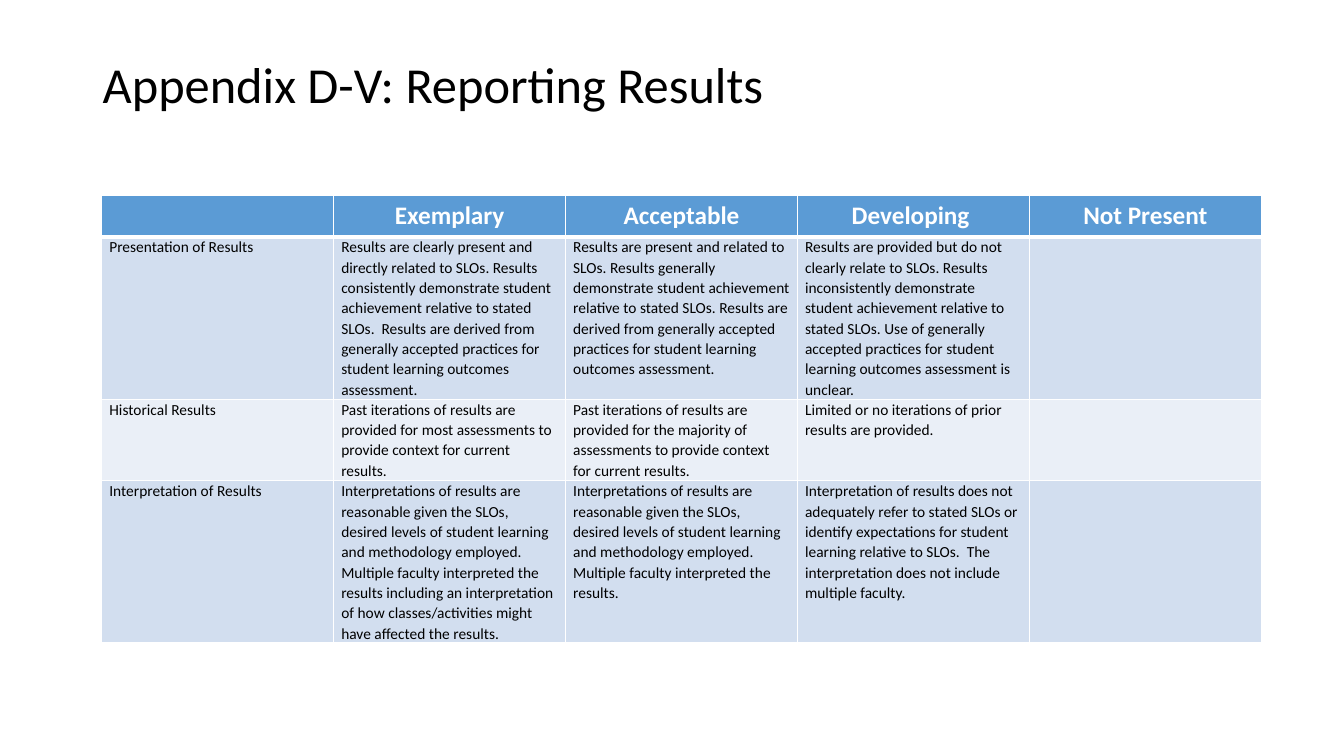
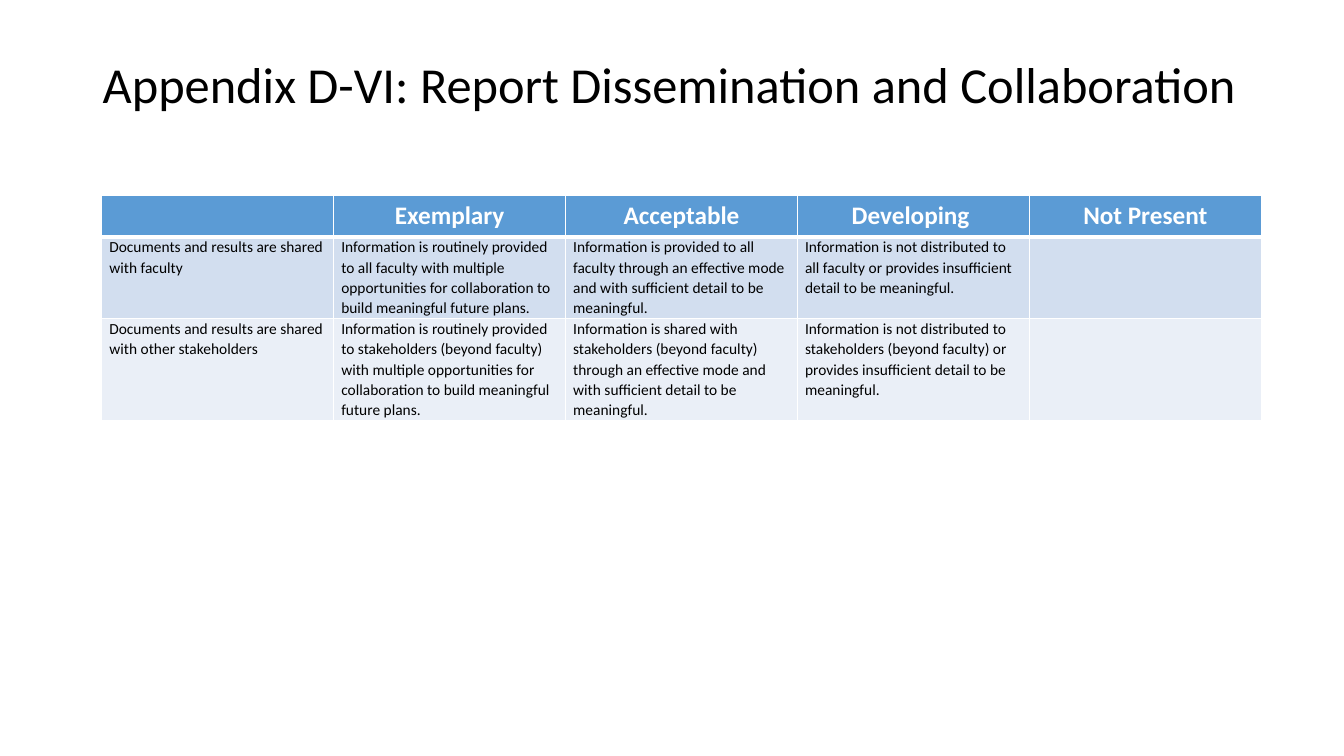
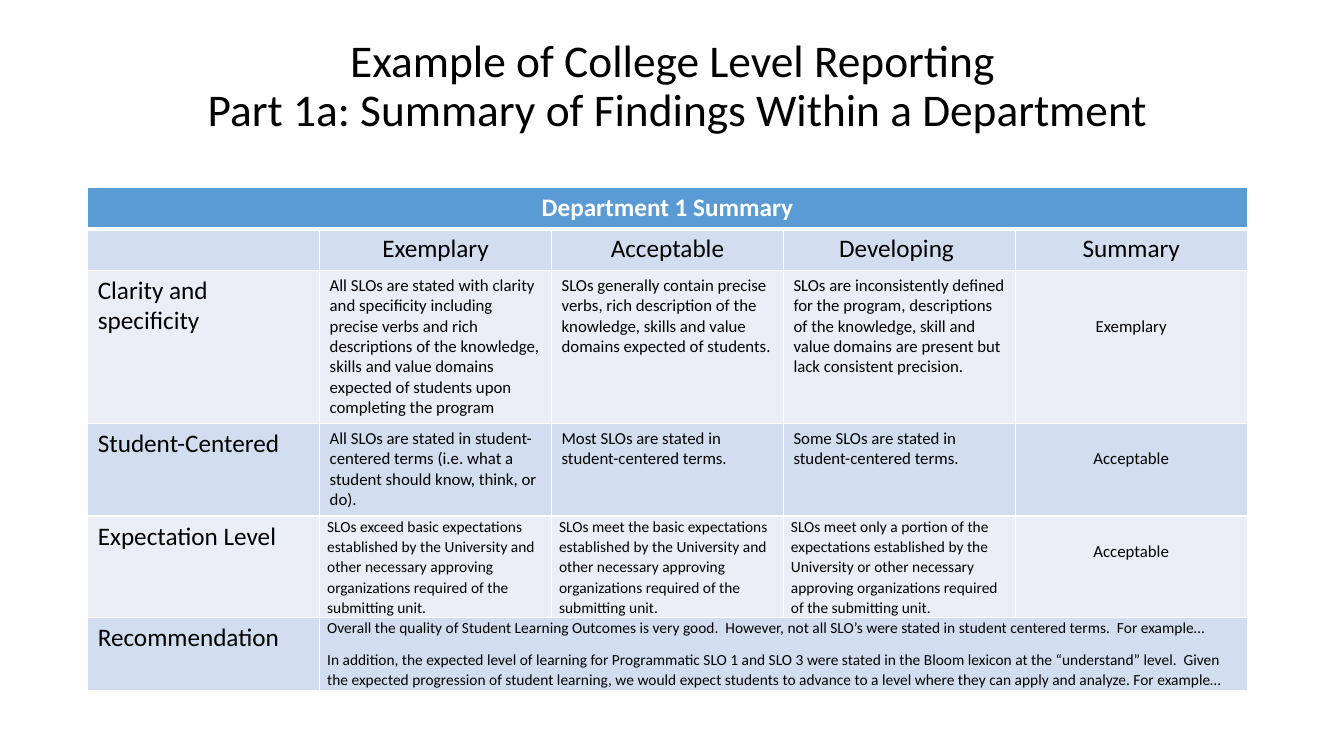
from dataclasses import dataclass
from itertools import zip_longest

from lxml.etree import SubElement
from pptx import Presentation
from pptx.dml.color import RGBColor
from pptx.enum.text import MSO_ANCHOR, PP_ALIGN as Align
from pptx.oxml.ns import qn
from pptx.util import Inches, Pt

FONT = "Calibri"
BLACK = RGBColor(0x00, 0x00, 0x00)
WHITE = RGBColor(0xFF, 0xFF, 0xFF)
BLUE = RGBColor(0x5B, 0x9B, 0xD5)
BANDS = (RGBColor(0xD2, 0xDE, 0xEF), RGBColor(0xEA, 0xEF, 0xF7))
COLS = 5
WIDTH = 11.5
ROW = 0.41
THIN, THICK = 1, 3


@dataclass(frozen=True)
class Style:
    """Text look; side, after and size in points, top and base in inches."""
    size: float
    color: RGBColor = BLACK
    bold: bool = False
    align: Align = Align.LEFT
    side: float = 7.2
    top: float = 0.05
    base: float = 0.05
    line: float = 1.0
    after: float = 0


@dataclass(frozen=True)
class Row:
    """Texts and their styles; the last text spans any columns left over."""
    height: float
    texts: tuple[str, ...]
    styles: tuple[Style, ...]


@dataclass(frozen=True)
class Page:
    title: tuple[str, ...]
    style: Style
    left: float
    top: float
    rows: tuple[Row, ...]


TITLE = Style(36, line=0.9)
MID = Style(32.4, align=Align.CENTER, line=0.9)
HEAD = Style(18, WHITE, True, Align.CENTER)
SUB = Style(18, align=Align.CENTER)
LABEL = Style(18)
BODY = Style(12)
NOTE = Style(11, side=5.4, top=0, base=0, line=1.07, after=8)
GRADE = Style(12, align=Align.CENTER, top=0.25)
LOW = Style(12, align=Align.CENTER, top=0.46)

LEVELS = ("", "Exemplary", "Acceptable", "Developing ")


def note(height: float, *texts: str) -> Row:
    """Row of notes with the last column left open."""
    return Row(height, (*texts, ""), (NOTE,) * COLS)


RUBRIC = Row(ROW, (*LEVELS, "Not Present"), (HEAD,) * COLS)

RESULTS = (
    RUBRIC,
    note(1.61, "Presentation of Results",
         "Results are clearly present and directly related to SLOs. Results consistently "
         "demonstrate student achievement relative to stated SLOs.  Results are derived from "
         "generally accepted practices for student learning outcomes assessment.",
         "Results are present and related to SLOs. Results generally demonstrate student "
         "achievement relative to stated SLOs. Results are derived from generally accepted "
         "practices for student learning outcomes assessment.",
         "Results are provided but do not clearly relate to SLOs. Results inconsistently "
         "demonstrate student achievement relative to stated SLOs. Use of generally accepted "
         "practices for student learning outcomes assessment is unclear."),
    note(0.81, "Historical Results",
         "Past iterations of results are provided for most assessments to provide context for "
         "current results.",
         "Past iterations of results are provided for the majority of assessments to provide "
         "context for current results.",
         "Limited or no iterations of prior results are provided."),
    note(1.61, "Interpretation of Results",
         "Interpretations of results are reasonable given the SLOs, desired levels of student "
         "learning and methodology employed. Multiple faculty interpreted the results including "
         "an interpretation of how classes/activities might have affected the results.",
         "Interpretations of results are reasonable given the SLOs, desired levels of student "
         "learning and methodology employed.  Multiple faculty interpreted the results.",
         "Interpretation of results does not adequately refer to stated SLOs or identify "
         "expectations for student learning relative to SLOs.  The interpretation does not "
         "include multiple faculty."),
)

SHARING = (
    RUBRIC,
    note(0.81, "Documents and results are shared with faculty",
         "Information is routinely provided to all faculty with multiple opportunities for "
         "collaboration to build meaningful future plans.",
         "Information is provided to all faculty through an effective mode and with sufficient "
         "detail to be meaningful.",
         "Information is not distributed to all faculty or provides insufficient detail to be "
         "meaningful."),
    note(1.01, "Documents and results are shared with other stakeholders",
         "Information is routinely provided to stakeholders (beyond faculty) with multiple "
         "opportunities for collaboration to build meaningful future plans.",
         "Information is shared with stakeholders (beyond faculty) through an effective mode and "
         "with sufficient detail to be meaningful.",
         "Information is not distributed to stakeholders (beyond faculty) or provides "
         "insufficient detail to be meaningful."),
)

SUMMARY = (
    Row(ROW, ("Department 1 Summary",), (HEAD,)),
    Row(ROW, (*LEVELS, "Summary"), (SUB,) * COLS),
    Row(1.52, (
        "Clarity and specificity",
        "All SLOs are stated with clarity and specificity including precise verbs and rich "
        "descriptions of the knowledge, skills and value domains expected of students upon "
        "completing the program",
        "SLOs generally contain precise verbs, rich description of the knowledge, skills and "
        "value domains expected of students.",
        "SLOs are inconsistently defined for the program, descriptions of the knowledge, skill "
        "and value domains are present but lack consistent precision.",
        "Exemplary"), (LABEL, BODY, BODY, BODY, LOW)),
    Row(0.92, (
        "Student-Centered",
        "All SLOs are stated in student-centered terms (i.e. what a student should know, think, "
        "or do).",
        "Most SLOs are stated in student-centered terms.",
        "Some SLOs are stated in student-centered terms.",
        "Acceptable"), (LABEL, BODY, BODY, BODY, GRADE)),
    Row(1.01, (
        "Expectation Level",
        "SLOs exceed basic expectations established by the University and other necessary "
        "approving organizations required of the submitting unit.",
        "SLOs meet the basic expectations established by the University and other necessary "
        "approving organizations required of the submitting unit.",
        "SLOs meet only a portion of the expectations established by the University or other "
        "necessary approving organizations required of the submitting unit.",
        "Acceptable"), (LABEL, NOTE, NOTE, NOTE, GRADE)),
    Row(0.72, (
        "Recommendation",
        "Overall the quality of Student Learning Outcomes is very good.  However, not all SLO’s "
        "were stated in student centered terms.  For example…\n"
        "In addition, the expected level of learning for Programmatic SLO 1 and SLO 3 were stated "
        "in the Bloom lexicon at the “understand” level.  Given the expected progression of "
        "student learning, we would expect students to advance to a level where they can apply "
        "and analyze. For example…"), (LABEL, NOTE)),
)

PAGES = (
    Page(("Appendix D-V: Reporting Results",), TITLE, 1.01, 1.94, RESULTS),
    Page(("Appendix D-VI: Report Dissemination and Collaboration",), TITLE, 1.01, 1.94, SHARING),
    Page(("Example of College Level Reporting",
          " Part 1a: Summary of Findings Within a Department"), MID, 0.87, 1.86, SUMMARY),
)


def add_lines(para, lines: tuple[str, ...], style: Style) -> None:
    """Write lines as runs of one paragraph, with line breaks between."""
    para.alignment = style.align
    para.line_spacing = style.line
    para.space_after = Pt(style.after)
    for num, line in enumerate(lines):
        if num:
            para.add_line_break()
        run = para.add_run()
        run.text = line
        run.font.name = FONT
        run.font.size = Pt(style.size)
        run.font.bold = style.bold
        run.font.color.rgb = style.color


def add_title(slide, lines: tuple[str, ...], style: Style) -> None:
    box = slide.shapes.add_textbox(Inches(0.92), Inches(0.4), Inches(WIDTH), Inches(0.93))
    frame = box.text_frame
    frame.word_wrap = True
    frame.vertical_anchor = MSO_ANCHOR.MIDDLE
    add_lines(frame.paragraphs[0], lines, style)


def set_edges(cell, row: int) -> None:
    """White cell borders, with a thick rule under the first row."""
    props = cell._tc.get_or_add_tcPr()
    top = THICK if row == 1 else THIN
    base = THICK if row == 0 else THIN
    for tag, width in (("L", THIN), ("R", THIN), ("T", top), ("B", base)):
        edge = SubElement(props, qn(f"a:ln{tag}"), w=str(Pt(width)))
        fill = SubElement(edge, qn("a:solidFill"))
        SubElement(fill, qn("a:srgbClr"), val=str(WHITE))


def fill_cell(cell, text: str, style: Style) -> None:
    cell.margin_left = cell.margin_right = Pt(style.side)
    cell.margin_top = Inches(style.top)
    cell.margin_bottom = Inches(style.base)
    frame = cell.text_frame
    for num, line in enumerate(text.split("\n")):
        para = frame.add_paragraph() if num else frame.paragraphs[0]
        add_lines(para, (line,), style)


def add_grid(slide, page: Page) -> None:
    height = sum(row.height for row in page.rows)
    table = slide.shapes.add_table(
        len(page.rows), COLS, Inches(page.left), Inches(page.top),
        Inches(WIDTH), Inches(height)).table
    table.horz_banding = False
    for num, row in enumerate(page.rows):
        table.rows[num].height = Inches(row.height)
        cells = [table.cell(num, col) for col in range(COLS)]
        for cell, text, style in zip_longest(cells, row.texts, row.styles):
            set_edges(cell, num)
            cell.fill.solid()
            cell.fill.fore_color.rgb = BANDS[(num - 1) % 2] if num else BLUE
            if text:
                fill_cell(cell, text, style)
        if len(row.texts) < COLS:
            cells[len(row.texts) - 1].merge(cells[-1])


def main() -> None:
    deck = Presentation()
    deck.slide_width, deck.slide_height = Inches(13.33), Inches(7.5)
    blank = deck.slide_layouts[6]
    for page in PAGES:
        slide = deck.slides.add_slide(blank)
        add_title(slide, page.title, page.style)
        add_grid(slide, page)
    deck.save("out.pptx")


if __name__ == "__main__":
    main()
